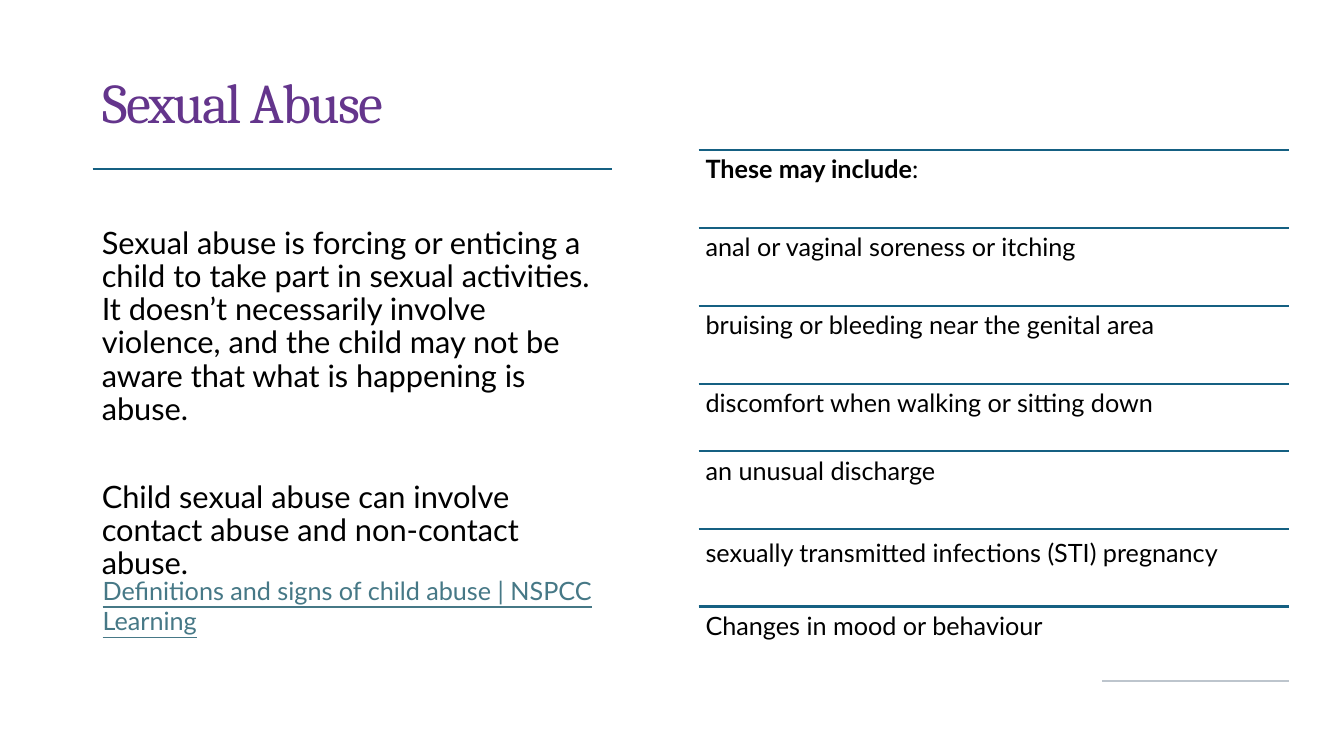
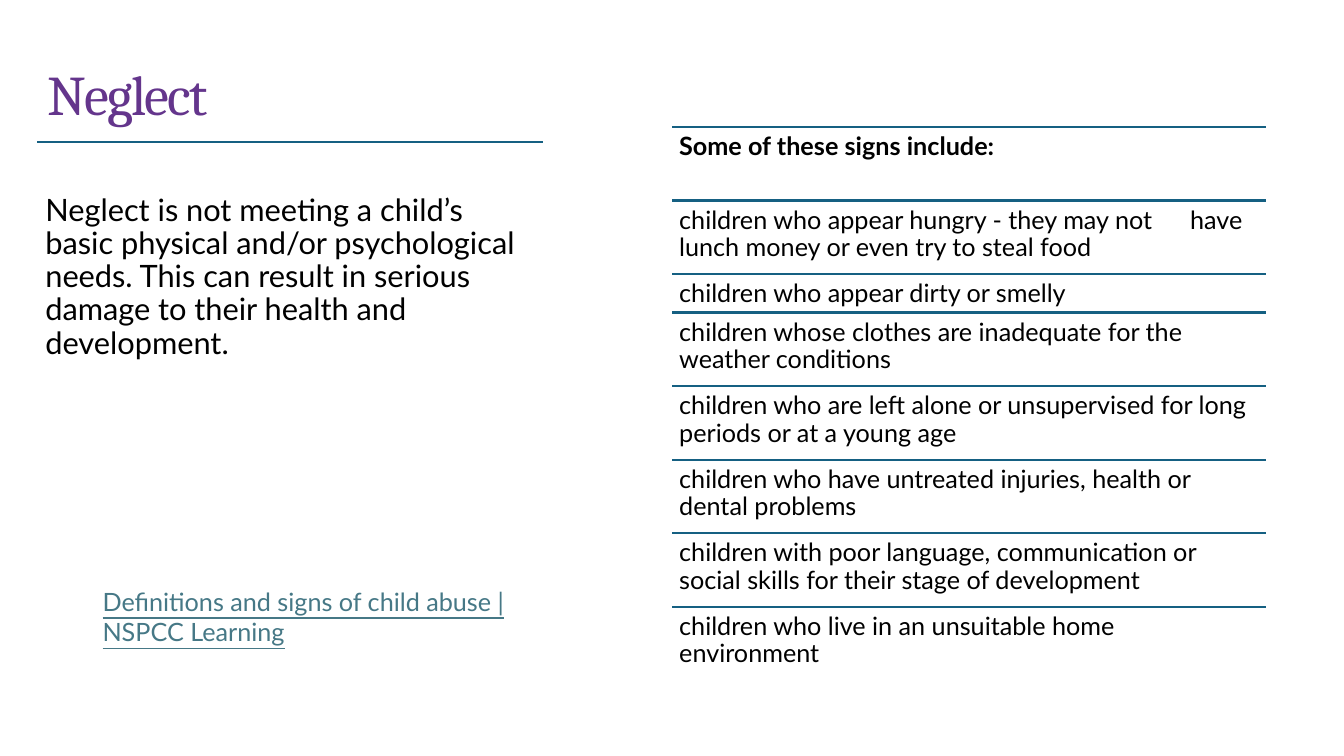
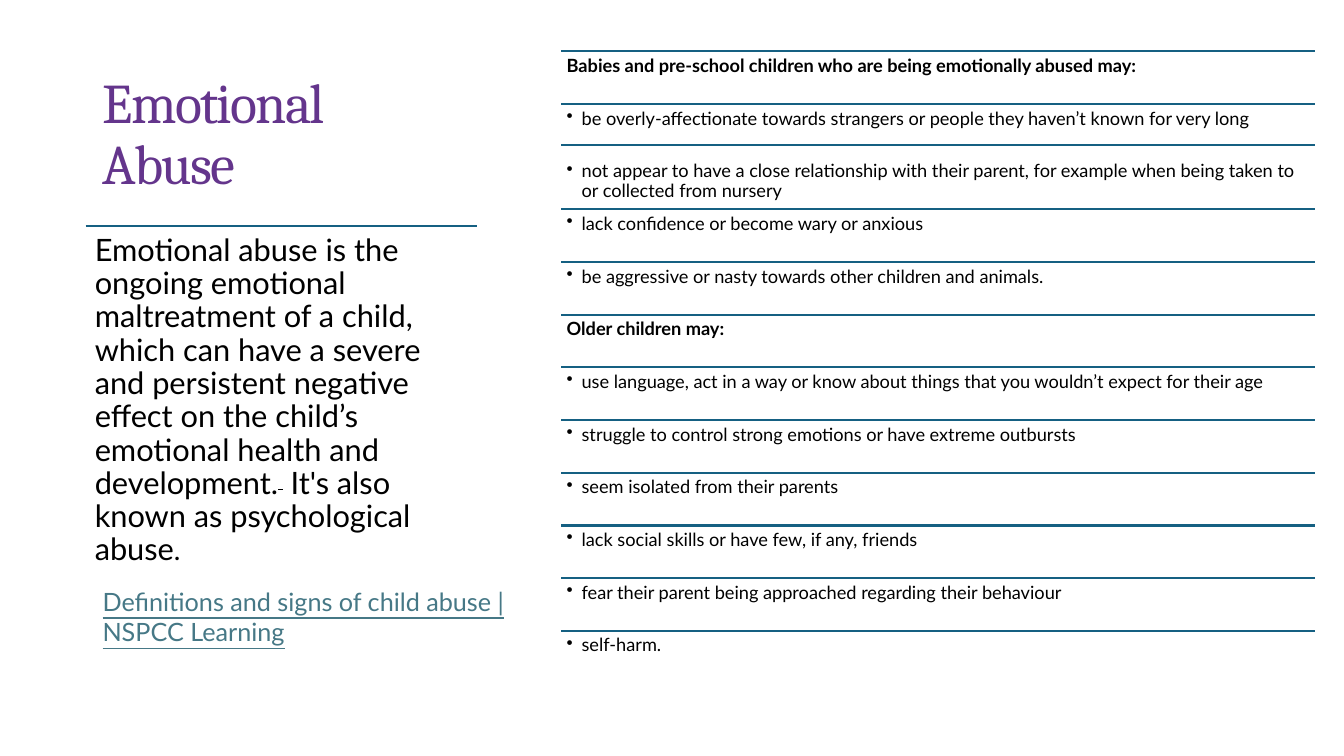
from typing import NamedTuple

from lxml.etree import SubElement
from pptx import Presentation
from pptx.dml.color import RGBColor
from pptx.enum.shapes import MSO_CONNECTOR as CONNECTOR
from pptx.enum.text import MSO_ANCHOR as ANCHOR, MSO_AUTO_SIZE as AUTO_SIZE, PP_ALIGN as ALIGN
from pptx.oxml.ns import qn
from pptx.util import Pt

COLORS = {
    "title": "64358C",
    "text": "000000",
    "link": "467886",
    "rule": "156082",
    "end_rule": "BDC5CD",
}
HEADING_FONT = "Cambria"
BODY_FONT = "Lato"
SOURCE = "Definitions and signs of child abuse | NSPCC Learning"
BULLET_INDENT = 10.7


class Row(NamedTuple):
    text: object
    bold: bool = False
    bullet: bool = False
    height: float = 0      # 0 takes the height shared by the list
    text_drop: float = 0   # moves the text below its row top
    rule_lift: float = 0   # moves the rule above its row top
    width: float = 0       # 0 takes the full list width
    tab: float = 0


def color(name):
    return RGBColor.from_string(COLORS[name])


def set_text(frame, paragraphs, inset=None, gap=0, spacing=0.9, bullet=False, tab=0, **base):
    """Fill a frame; a paragraph is a string or a list of (text, format) runs."""
    frame.word_wrap = True
    frame.auto_size = AUTO_SIZE.NONE
    frame.vertical_anchor = ANCHOR.TOP
    if inset is not None:
        frame.margin_left = frame.margin_right = Pt(inset)
        frame.margin_top = frame.margin_bottom = Pt(inset)
    for index, content in enumerate(paragraphs):
        paragraph = frame.add_paragraph() if index else frame.paragraphs[0]
        props = paragraph._p.get_or_add_pPr()
        if bullet:
            props.set("marL", str(Pt(BULLET_INDENT)))
            props.set("indent", str(-Pt(BULLET_INDENT)))
            SubElement(props, qn("a:buChar"), char="•")
        if tab:
            stops = SubElement(props, qn("a:tabLst"))
            SubElement(stops, qn("a:tab"), pos=str(Pt(tab)), algn="l")
        paragraph.alignment = ALIGN.LEFT
        paragraph.line_spacing = spacing
        if index:
            paragraph.space_before = Pt(gap)
        runs = [(content, {})] if isinstance(content, str) else content
        for text, changes in runs:
            add_run(paragraph, text, **{**base, **changes})


def add_run(paragraph, text, size=18, font=BODY_FONT, ink="text", bold=False,
            underline=False, tracking=0, baseline=0):
    run = paragraph.add_run()
    run.text = text
    run.font.size = Pt(size)
    run.font.name = font
    run.font.bold = bold
    run.font.underline = underline
    run.font.color.rgb = color(ink)
    props = run._r.get_or_add_rPr()
    if tracking:
        props.set("spc", str(round(tracking * 100)))
    if baseline:
        props.set("baseline", str(baseline * 1000))


def add_rule(shapes, left, top, width, ink="rule"):
    rule = shapes.add_connector(CONNECTOR.STRAIGHT, Pt(left), Pt(top), Pt(left + width), Pt(top))
    rule.line.color.rgb = color(ink)
    rule.line.width = Pt(1.5)
    SubElement(rule._element.spPr, qn("a:effectLst"))


def add_text(shapes, left, top, width, height, paragraphs, **fmt):
    box = shapes.add_textbox(Pt(left), Pt(top), Pt(width), Pt(height))
    set_text(box.text_frame, paragraphs, **fmt)


def add_titled_slide(deck, title, left=66.2, top=50.4):
    slide = deck.slides.add_slide(deck.slide_layouts[5])
    heading = slide.shapes.title
    heading.left, heading.top, heading.width, heading.height = Pt(left), Pt(top), Pt(269.3), Pt(80)
    set_text(heading.text_frame, [title], size=40, font=HEADING_FONT, ink="title", tracking=-1.2)
    return slide


def add_source(slide, top=415.4, width=311.8):
    add_text(slide.shapes, 66.2, top, width, 51, [SOURCE], spacing=1.0, ink="link", underline=True)


def add_definition(slide, left, top, width, height, paragraphs, drop=0, inset=6.5):
    """A rule with the definition under it."""
    shapes = slide.shapes.add_group_shape().shapes
    add_rule(shapes, left, top, width)
    add_text(shapes, left, top + drop, width, height - drop, paragraphs,
             inset=inset, gap=39.1, size=22)


def add_signs(slide, left, top, width, row_height, rows, size=18, inset=5):
    """Ruled rows, stacked; returns the group's shapes."""
    shapes = slide.shapes.add_group_shape().shapes
    for row in rows:
        height = row.height or row_height
        add_rule(shapes, left, top - row.rule_lift, width)
        add_text(shapes, left, top + row.text_drop, row.width or width, height, [row.text],
                 inset=inset, size=size, bold=row.bold, bullet=row.bullet, tab=row.tab)
        top += height
    return shapes


def build_sexual_abuse(deck):
    slide = add_titled_slide(deck, "Sexual Abuse")
    add_source(slide, top=407.5, width=370.8)
    add_definition(slide, 66.2, 121, 370.8, 298, [
        "Sexual abuse is forcing or enticing a child to take part in sexual activities. "
        "It doesn’t necessarily involve violence, and the child may not be aware that "
        "what is happening is abuse.",
        "Child sexual abuse can involve contact abuse and non-contact abuse.",
    ], drop=35)
    left, width = 499, 422
    signs = add_signs(slide, left, 107.3, width, 55.6, [
        Row([("These may include", {"bold": True}), (":", {})]),
        Row("anal or vaginal soreness or itching"),
        Row("bruising or bleeding near the genital area"),
        Row("discomfort when walking or sitting down", height=48.3),
        Row("an unusual discharge"),
        Row("sexually transmitted infections (STI) pregnancy", text_drop=2.9),
        Row("Changes in mood or behaviour", width=288),
    ])
    # Closing rule, and the heavier one above the last row
    add_rule(signs, 787.5, 486.7, left + width - 787.5, ink="end_rule")
    add_rule(slide.shapes, left, 432.7, width)


def build_neglect(deck):
    slide = add_titled_slide(deck, "Neglect", left=26.6, top=44.6)
    add_source(slide)
    add_signs(slide, 480.2, 90.7, 424, 52.55, [
        Row("Some of these signs include:", bold=True),
        Row("children who appear hungry - they may not\thave lunch money or even try to "
            "steal food", tab=365),
        Row("children who appear dirty or smelly", height=27.4),
        Row("children whose clothes are inadequate for the weather conditions"),
        Row("children who are left alone or unsupervised for long periods or at a young age"),
        Row("children who have untreated injuries, health or dental problems"),
        Row("children with poor language, communication or social skills for their stage "
            "of development"),
        Row("children who live in an unsuitable home environment"),
    ])
    add_definition(slide, 26.6, 101.5, 361.4, 219, [
        "Neglect is not meeting a child’s basic physical and/or psychological needs. "
        "This can result in serious damage to their health and development.",
    ], drop=31.6, inset=5.8)


def build_emotional_abuse(deck):
    slide = add_titled_slide(deck, "Emotional Abuse")
    add_source(slide)
    add_definition(slide, 61.2, 161.3, 279.4, 267, [[
        ("Emotional abuse is the ongoing emotional maltreatment of a child, which can have "
         "a severe and persistent negative effect on the child’s emotional health and "
         "development.", {}),
        (" ", {"underline": True, "baseline": 30}),
        (" It's also known as psychological abuse", {}),
        (".", {"size": 20}),
    ]])
    add_signs(slide, 401, 36.7, 538, 37.63, [
        Row("Babies and pre-school children who are being emotionally abused may:", bold=True),
        Row("be overly-affectionate towards strangers or people they haven’t known for very "
            "long", bullet=True),
        Row("not appear to have a close relationship with their parent, for example when "
            "being taken to or collected from nursery", bullet=True, rule_lift=8.2),
        Row("lack confidence or become wary or anxious", bullet=True),
        Row("be aggressive or nasty towards other children and animals.", bullet=True),
        Row("Older children may:", bold=True),
        Row("use language, act in a way or know about things that you wouldn’t expect for "
            "their age", bullet=True),
        Row("struggle to control strong emotions or have extreme outbursts", bullet=True),
        Row("seem isolated from their parents", bullet=True),
        Row("lack social skills or have few, if any, friends", bullet=True),
        Row("fear their parent being approached regarding their behaviour", bullet=True),
        Row("self-harm.", bullet=True),
    ], size=13, inset=3.8)


def main():
    deck = Presentation()
    deck.slide_width, deck.slide_height = Pt(960), Pt(540)
    build_sexual_abuse(deck)
    build_neglect(deck)
    build_emotional_abuse(deck)
    deck.save("out.pptx")


if __name__ == "__main__":
    main()
